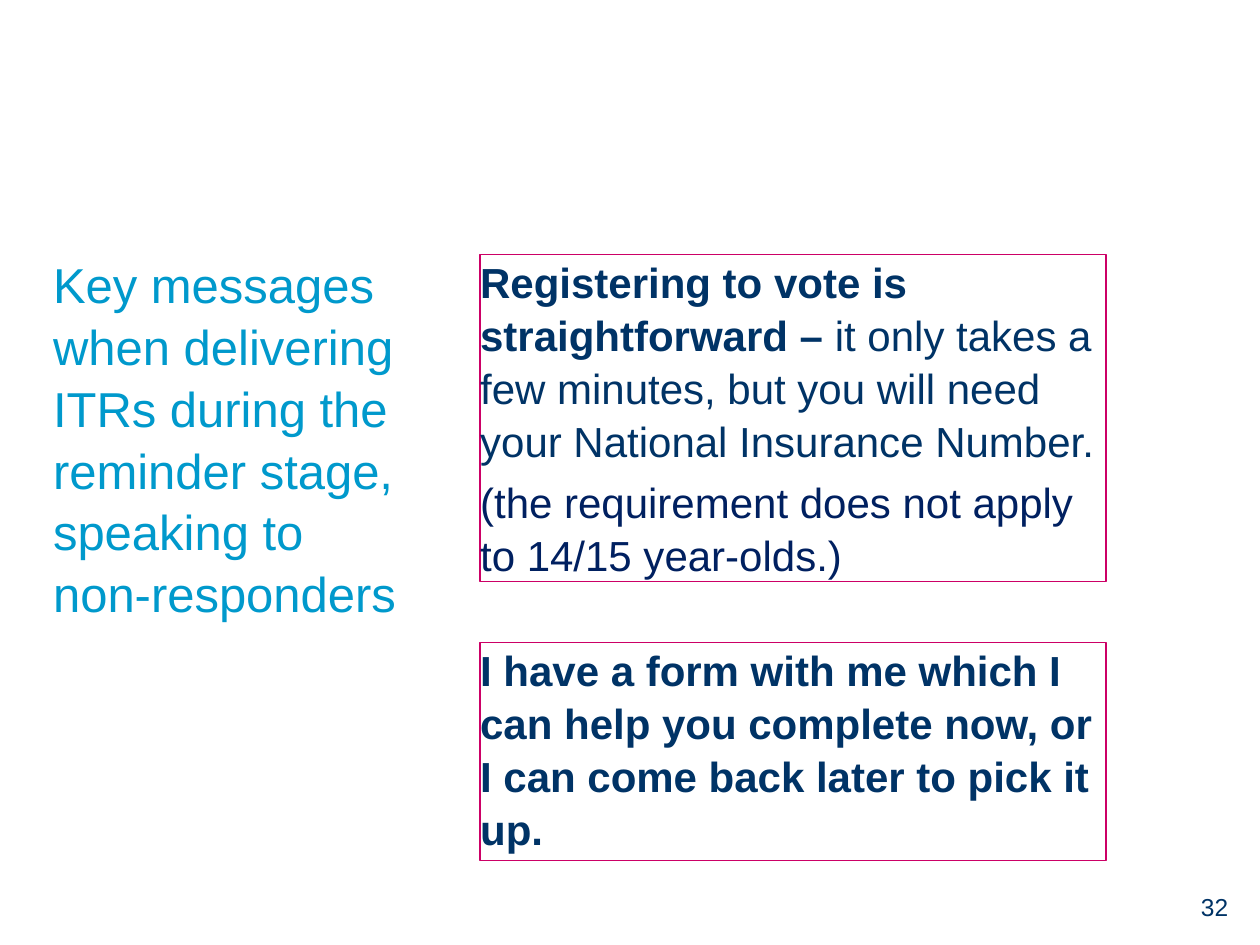
from pptx import Presentation
from pptx.dml.color import RGBColor
from pptx.enum.shapes import MSO_SHAPE
from pptx.enum.text import MSO_ANCHOR, PP_ALIGN
from pptx.util import Cm, Pt

RECTANGLE = MSO_SHAPE.RECTANGLE
TOP = MSO_ANCHOR.TOP
LEFT, RIGHT = PP_ALIGN.LEFT, PP_ALIGN.RIGHT

SKY = RGBColor(0x00, 0x99, 0xCC)
NAVY = RGBColor(0x00, 0x33, 0x66)
INDIGO = RGBColor(0x00, 0x20, 0x60)
MAGENTA = RGBColor(0xCC, 0x00, 0x66)

TITLE_ONLY = 5
MESSAGE_LEFT, MESSAGE_WIDTH = 9.68, 12.62


def apply_format(target, values):
    for name, value in values.items():
        setattr(target, name, value)


class MessageSlide:
    font_name = "Arial"
    frame_format = dict(margin_left=0, margin_right=0, margin_top=0,
                        margin_bottom=0, word_wrap=True, vertical_anchor=TOP)

    def __init__(self, deck):
        self.slide = deck.slides.add_slide(deck.slide_layouts[TITLE_ONLY])

    def fill_text(self, frame, paragraphs, size, align=LEFT, line_spacing=1.05):
        apply_format(frame, self.frame_format)
        for index, runs in enumerate(paragraphs):
            paragraph = frame.add_paragraph() if index else frame.paragraphs[0]
            apply_format(paragraph, dict(alignment=align, line_spacing=line_spacing,
                                         space_before=Pt(4.8 if index else 0)))
            for text, color, bold in runs:
                run = paragraph.add_run()
                run.text = text
                apply_format(run.font, dict(name=self.font_name, size=Pt(size), bold=bold))
                run.font.color.rgb = color

    def title(self, text, left, top, width, height):
        heading = self.slide.shapes.title
        apply_format(heading, dict(left=Cm(left), top=Cm(top),
                                   width=Cm(width), height=Cm(height)))
        self.fill_text(heading.text_frame, [[(text, SKY, False)]], 28)

    def page_number(self, text, left, top, width, height):
        number = self.slide.shapes.add_textbox(Cm(left), Cm(top), Cm(width), Cm(height))
        self.fill_text(number.text_frame, [[(text, NAVY, False)]], 14, RIGHT, 1.0)

    def message(self, paragraphs, top, height):
        panel = self.slide.shapes.add_shape(
            RECTANGLE, Cm(MESSAGE_LEFT), Cm(top), Cm(MESSAGE_WIDTH), Cm(height))
        panel.shadow.inherit = False
        panel.fill.background()
        panel.line.color.rgb = MAGENTA
        panel.line.width = Pt(0.75)
        self.fill_text(panel.text_frame, paragraphs, 24)


def main():
    deck = Presentation()
    apply_format(deck, dict(slide_width=Cm(25.4), slide_height=Cm(19.05)))
    page = MessageSlide(deck)
    page.title("Key messages when delivering ITRs during the reminder stage, "
               "speaking to non-responders", 1.07, 5.08, 6.98, 11.86)
    page.page_number("32", 19.48, 17.98, 5.28, 0.64)
    page.message([
        [("I have a form with me which I can help you complete now, "
          "or I can come back later to pick it up.", NAVY, True)],
    ], 12.95, 4.4)
    page.message([
        [("Registering to vote is straightforward – ", NAVY, True),
         ("it only takes a few minutes, but you will need your "
          "National Insurance Number.", NAVY, False)],
        [("(the requirement does not apply to 14/15 year-olds.)", INDIGO, False)],
    ], 5.13, 6.6)
    deck.save("out.pptx")


if __name__ == "__main__":
    main()
